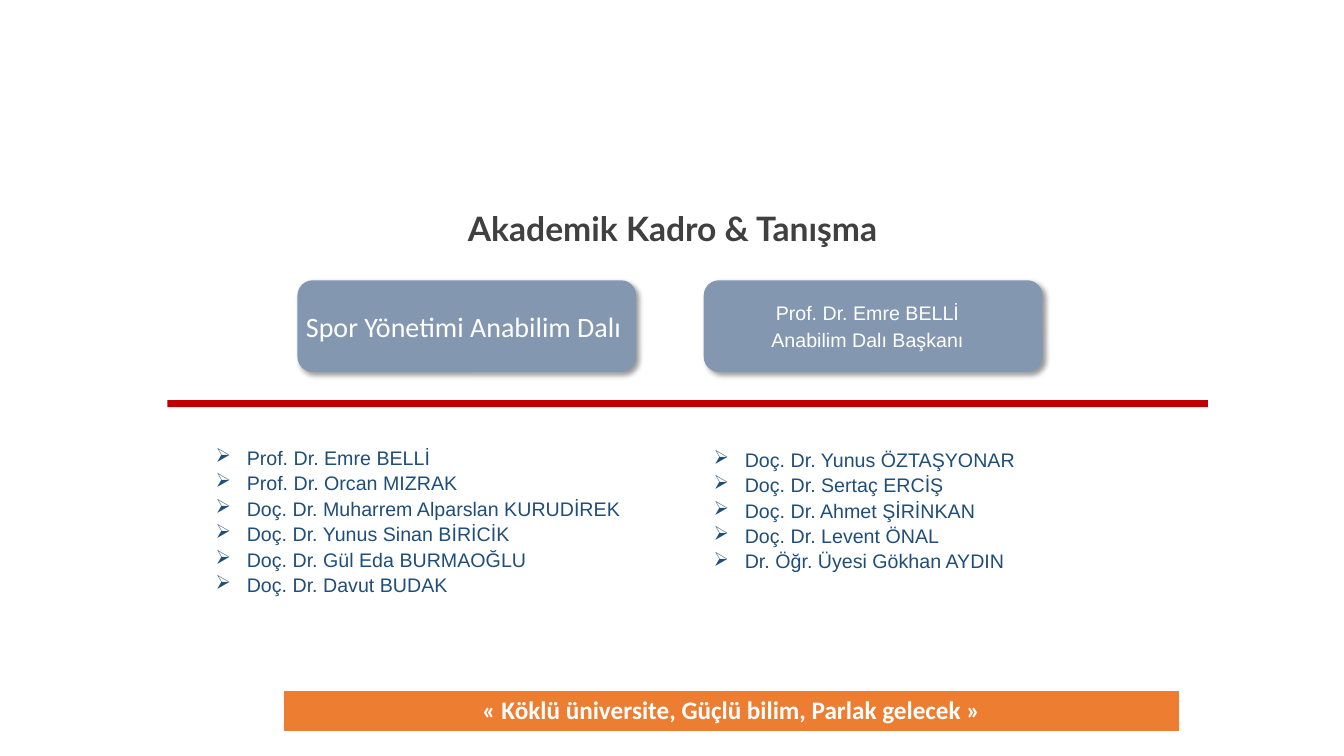
from dataclasses import dataclass

from lxml.etree import SubElement
from pptx import Presentation
from pptx.dml.color import RGBColor
from pptx.enum.shapes import MSO_SHAPE as Shape
from pptx.enum.text import MSO_ANCHOR as Anchor, MSO_AUTO_SIZE as AutoSize, PP_ALIGN as Align
from pptx.oxml.ns import qn
from pptx.util import Inches, Pt


@dataclass(frozen=True)
class Theme:
    heading_font: str = "Lato"
    label_font: str = "Calibri"
    body_font: str = "Arial"
    dark: str = "404041"
    white: str = "FFFFFF"
    card: str = "8497B0"
    rule: str = "C00000"
    banner: str = "ED7D31"
    names: str = "1F4E79"
    title_size: int = 24
    card_size: int = 20
    banner_size: int = 18
    body_size: int = 14


class StaffSlide:
    """Places elements by percent of the slide's width and height."""

    def __init__(self, prs, theme):
        self.prs, self.theme = prs, theme
        self.s = prs.slides.add_slide(prs.slide_layouts[5])

    def box(self, x, y, w, h):
        width, height = self.prs.slide_width, self.prs.slide_height
        return [round(v * full / 100) for v, full in
                ((x, width), (y, height), (w, width), (h, height))]

    def style(self, p, font, size, color, bold=False, align=Align.LEFT):
        p.alignment = align
        for r in p.runs:
            r.font.name, r.font.size, r.font.bold = font, Pt(size), bold
            r.font.color.rgb = RGBColor.from_string(color)

    def title(self, text, *area):
        t = self.theme
        sp = self.s.shapes.title
        sp.left, sp.top, sp.width, sp.height = self.box(*area)
        tf = sp.text_frame
        tf.text = text
        tf.vertical_anchor = Anchor.MIDDLE
        self.style(tf.paragraphs[0], t.heading_font, t.title_size, t.dark, True, Align.CENTER)

    def shape(self, kind, color, *area):
        sp = self.s.shapes.add_shape(kind, *self.box(*area))
        sp.shadow.inherit = False
        sp.fill.solid()
        sp.fill.fore_color.rgb = RGBColor.from_string(color)
        sp.line.fill.background()
        return sp

    def card(self, lines, font, size, align, *area):
        sp = self.shape(Shape.ROUNDED_RECTANGLE, self.theme.card, *area)
        # Soft shadow to the lower right
        effects = sp._element.spPr.find(qn("a:effectLst"))
        shadow = SubElement(effects, qn("a:outerShdw"), blurRad=str(Pt(4)), dist=str(Pt(3)),
                            dir="2700000", algn="tl", rotWithShape="0")
        black = SubElement(shadow, qn("a:srgbClr"), val="000000")
        SubElement(black, qn("a:alpha"), val="40000")

        tf = sp.text_frame
        tf.text = "\n".join(lines)
        tf.word_wrap = True
        tf.vertical_anchor = Anchor.MIDDLE
        tf.margin_left = tf.margin_right = tf.margin_top = tf.margin_bottom = Inches(0.04)
        for p in tf.paragraphs:
            self.style(p, font, size, self.theme.white, align=align)
            if len(lines) > 1:
                p.space_after = Pt(3)
        return sp

    def name_list(self, names, *area):
        t = self.theme
        tf = self.s.shapes.add_textbox(*self.box(*area)).text_frame
        tf.text = "\n".join(names)
        tf.word_wrap = True
        tf.auto_size = AutoSize.SHAPE_TO_FIT_TEXT
        for p in tf.paragraphs:
            p.line_spacing, p.space_after = 0.9, Pt(3)
            pPr = p._p.get_or_add_pPr()
            pPr.set("marL", str(Inches(0.31)))
            pPr.set("indent", str(-Inches(0.31)))
            SubElement(pPr, qn("a:buChar"), char="➢")
            self.style(p, t.body_font, t.body_size, t.names)

    def banner(self, text, *area):
        t = self.theme
        table = self.s.shapes.add_table(1, 1, *self.box(*area)).table
        cell = table.cell(0, 0)
        cell.text = text
        cell.fill.solid()
        cell.fill.fore_color.rgb = RGBColor.from_string(t.banner)
        self.style(cell.text_frame.paragraphs[0], t.label_font, t.banner_size, t.white,
                   True, Align.CENTER)


def main():
    prs = Presentation()
    prs.slide_width, prs.slide_height = Inches(13.33), Inches(7.5)
    t = Theme()
    slide = StaffSlide(prs, t)
    left_card, right_column = 22.13, 52.36
    card_area = (37.07, 25.21, 12.13)

    # Heading and motto
    slide.title("Akademik Kadro & Tanışma", 14.78, 25.87, 70.52, 8.53)
    slide.banner("« Köklü üniversite, Güçlü bilim, Parlak gelecek »", 21.08, 91.33, 66.69, 5.47)

    # Department and its head
    slide.card(["Spor Yönetimi Anabilim Dalı"], t.label_font, t.card_size, Align.LEFT,
               left_card, *card_area)
    head = slide.card(["Prof. Dr. Emre BELLİ", "Anabilim Dalı Başkanı"], t.body_font,
                      t.body_size, Align.CENTER, right_column, *card_area)
    head.text_frame.paragraphs[0]._p.get_or_add_pPr().set("marR", str(Inches(0.11)))

    # Red divider
    slide.shape(Shape.RECTANGLE, t.rule, 12.45, 52.93, 77.42, 0.93)

    # Staff lists
    slide.name_list(["Prof. Dr. Emre BELLİ", "Prof. Dr. Orcan MIZRAK",
                     "Doç. Dr. Muharrem Alparslan KURUDİREK", "Doç. Dr. Yunus Sinan BİRİCİK",
                     "Doç. Dr. Gül Eda BURMAOĞLU", "Doç. Dr. Davut BUDAK"],
                    15.3, 58.67, 32.03, 24.53)
    slide.name_list(["Doç. Dr. Yunus ÖZTAŞYONAR", "Doç. Dr. Sertaç ERCİŞ",
                     "Doç. Dr. Ahmet ŞİRİNKAN", "Doç. Dr. Levent ÖNAL",
                     "Dr. Öğr. Üyesi Gökhan AYDIN"],
                    right_column, 58.93, 30.91, 17.73)

    prs.save("out.pptx")


if __name__ == "__main__":
    main()
